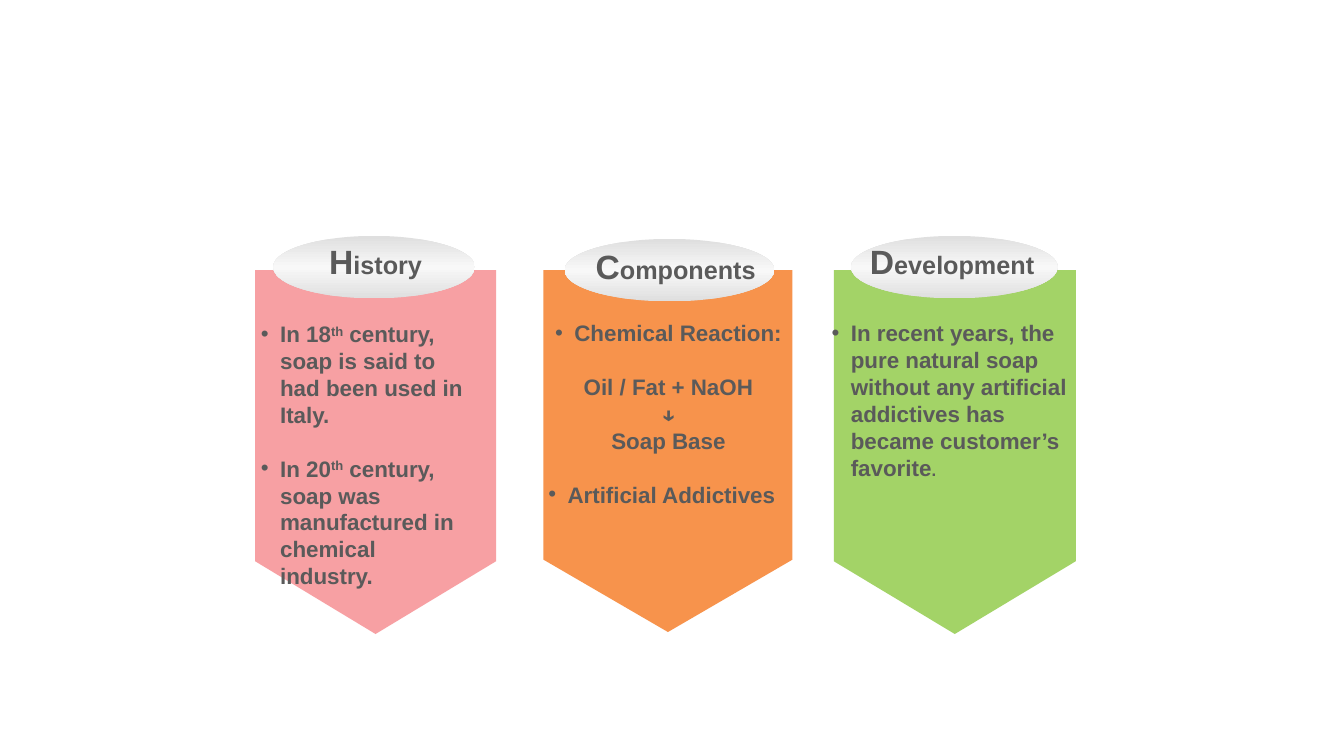
from copy import deepcopy
from lxml import etree
from pptx import Presentation
from pptx.dml.color import RGBColor
from pptx.enum.shapes import MSO_SHAPE
from pptx.enum.text import MSO_AUTO_SIZE, PP_ALIGN
from pptx.oxml.ns import qn
from pptx.util import Inches, Pt

BANNER = MSO_SHAPE.FLOWCHART_OFFPAGE_CONNECTOR
OVAL = MSO_SHAPE.OVAL
FIT = MSO_AUTO_SIZE.SHAPE_TO_FIT_TEXT
LEFT, MID = PP_ALIGN.LEFT, PP_ALIGN.CENTER
HUES = {"pink": "F5787D", "orange": "F57820", "green": "8CC841",
        "edge": "DFDFDF", "shine": "F8F8F8", "text": "5A5A5A"}
LINE = 1.2

prs = Presentation()
prs.slide_width, prs.slide_height = Inches(13.33), Inches(7.5)
slide = prs.slides.add_slide(prs.slide_layouts[6])


def add_form(kind, box):
    form = slide.shapes.add_shape(kind, *map(Inches, box))
    form.shadow.inherit = False
    form.line.fill.background()
    return form


def style(para, size, align, face="Arial"):
    para.alignment = align
    para.line_spacing = Pt(size * LINE)
    font = para.font
    font.name, font.size, font.bold = face, Pt(size), True
    font.color.rgb = RGBColor.from_string(HUES["text"])


columns = [
    {"hue": "pink", "alpha": 70, "banner": (2.53, 2.68, 2.39, 3.61),
     "oval": (2.71, 2.34, 2, 0.62), "head": (3.15, 2.34, 1.15, 0.5),
     "title": "History", "align": MID, "body": (2.49, 3.13, 2.3, 2.97),
     "paras": [
         (["In 18", "th", " century, soap is said to had been used in Italy."], True, LEFT, 0),
         (["In 20", "th", " century, soap was manufactured in chemical industry."], True, LEFT, 1)]},
    {"hue": "orange", "alpha": 80, "banner": (5.39, 2.68, 2.47, 3.59),
     "oval": (5.6, 2.37, 2.08, 0.62), "head": (5.81, 2.39, 1.81, 0.5),
     "title": "Components", "align": LEFT, "body": (5.34, 3.12, 2.58, 1.99),
     "paras": [
         (["Chemical Reaction:"], True, MID, 0),
         (["Oil / Fat + NaOH"], False, MID, 1),
         (["↓"], False, MID, 0),
         (["Soap Base"], False, MID, 0),
         (["Artificial Addictives"], True, LEFT, 1)]},
    {"hue": "green", "alpha": 80, "banner": (8.27, 2.68, 2.4, 3.61),
     "oval": (8.44, 2.34, 2.05, 0.62), "head": (8.53, 2.34, 1.85, 0.5),
     "title": "Development", "align": LEFT, "body": (8.15, 3.12, 2.58, 1.72),
     "paras": [
         (["In recent years, the pure natural soap without any artificial "
           "addictives has became customer’s favorite", "."], True, LEFT, 0)]},
]

for col in columns:
    banner = add_form(BANNER, col["banner"])
    banner.fill.solid()
    banner.fill.fore_color.rgb = RGBColor.from_string(HUES[col["hue"]])
    tint = banner._element.spPr.find(".//" + qn("a:srgbClr"))
    etree.SubElement(tint, qn("a:alpha")).set("val", str(col["alpha"] * 1000))

    oval = add_form(OVAL, col["oval"])
    oval.fill.gradient()
    oval.fill.gradient_angle = 90
    stops = oval._element.spPr.find(".//" + qn("a:gsLst"))
    stops.insert(1, deepcopy(stops[0]))
    for stop, hue, pos in zip(oval.fill.gradient_stops, ("edge", "shine", "edge"), (0, 0.5, 1)):
        stop.color.rgb = RGBColor.from_string(HUES[hue])
        stop.position = pos

    head = slide.shapes.add_textbox(*map(Inches, col["head"])).text_frame
    head.word_wrap = False
    head.auto_size = FIT
    para = head.paragraphs[0]
    style(para, 24, col["align"])
    for text, size in ((col["title"][0], 24), (col["title"][1:], 18)):
        run = para.add_run()
        run.text = text
        run.font.size = Pt(size)

    body = slide.shapes.add_textbox(*map(Inches, col["body"])).text_frame
    body.word_wrap = True
    body.auto_size = FIT
    for i, (texts, dot, align, gap) in enumerate(col["paras"]):
        para = body.add_paragraph() if i else body.paragraphs[0]
        props = para._p.get_or_add_pPr()
        props.set("marL", str(Inches(0.19)))
        props.set("indent", str(-Inches(0.19)))
        if dot:
            etree.SubElement(props, qn("a:buFont")).set("typeface", "Arial")
            etree.SubElement(props, qn("a:buChar")).set("char", "•")
        style(para, 16, align, "Montserrat" if texts == ["↓"] else "Arial")
        if gap:
            para.space_before = Pt(16 * LINE)
        for text in texts:
            run = para.add_run()
            run.text = text
            if text == "th":
                run._r.get_or_add_rPr().set("baseline", "30000")
            elif text == ".":
                run.font.size = Pt(12)

prs.save("out.pptx")
